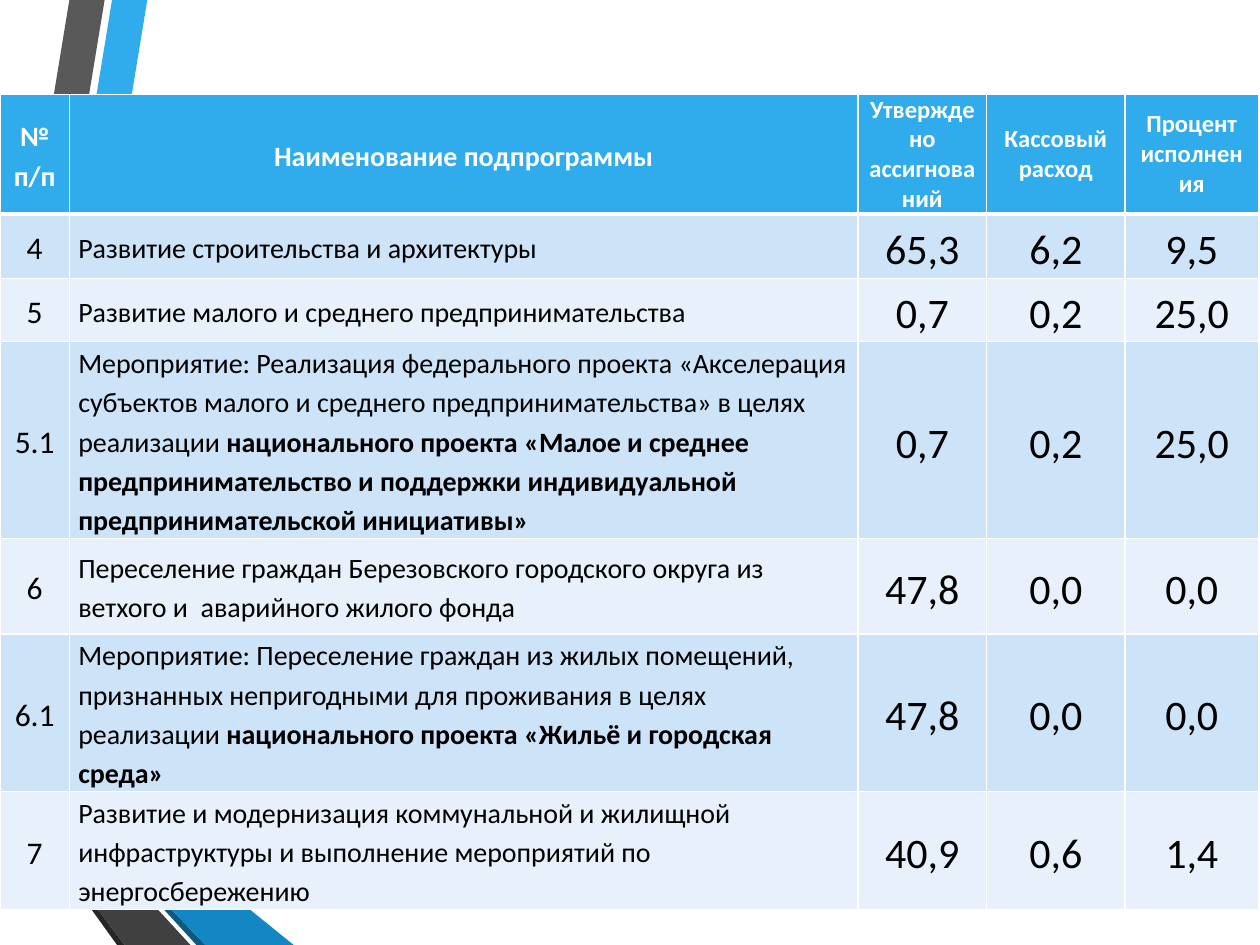
from lxml import etree
from pptx import Presentation
from pptx import util as u
from pptx.dml.color import RGBColor
from pptx.enum import text
from pptx.oxml.ns import qn

WHITE, BLACK, BLUE = "FFFFFF", "000000", "30ACEC"
BANDS = ("CDE3F8", "E8F1FB")
SLIDE_W, SLIDE_H = 25.4, 19.05

# Ribbons: fill colour and corner points in cm
RIBBONS = [
    (BLUE, [(0, 13.82), (0, 14.61), (0.56, 14.71), (2.97, 0), (2.26, 0)]),
    ("595959", [(2.11, 0), (1.4, 0), (0, 8.53), (0, 12.85)]),
    ("262626", [(0, 15.72), (0, 15.77), (2.36, SLIDE_H), (2.51, SLIDE_H)]),
    ("0C5A82", [(0, 14.71), (0, 14.73), (3.96, SLIDE_H), (4.14, SLIDE_H)]),
    ("1287C3", [(0, 14.71), (4.14, SLIDE_H), (5.92, SLIDE_H), (0.56, 14.71), (0, 14.61)]),
    ("404040", [(0, 15.72), (2.51, SLIDE_H), (3.84, SLIDE_H), (0, 14.88)]),
]

COLUMN_WIDTHS = [1.4, 15.9, 2.59, 2.79, 2.69]
ROW_HEIGHTS = [1.4, 1.3, 1.27, 2.34, 1.93, 2.34, 2.34]
HEADINGS = ["№ п/п", "Наименование подпрограммы", "Утверждено ассигнований",
            "Кассовый расход", "Процент исполнения"]

# Number, name, bold ending of the name, approved, spent, percent
PROGRAMMES = [
    ("4", "Развитие строительства и архитектуры", "", "65,3", "6,2", "9,5"),
    ("5", "Развитие малого и среднего предпринимательства", "", "0,7", "0,2", "25,0"),
    ("5.1", "Мероприятие: Реализация федерального проекта «Акселерация субъектов малого "
     "и среднего предпринимательства» в целях реализации ",
     "национального проекта «Малое и среднее предпринимательство и поддержки "
     "индивидуальной предпринимательской инициативы»", "0,7", "0,2", "25,0"),
    ("6", "Переселение граждан Березовского городского округа из ветхого и  аварийного "
     "жилого фонда", "", "47,8", "0,0", "0,0"),
    ("6.1", "Мероприятие: Переселение граждан из жилых помещений, признанных непригодными "
     "для проживания в целях реализации ",
     "национального проекта «Жильё и городская среда»", "47,8", "0,0", "0,0"),
    ("7", "Развитие и модернизация коммунальной и жилищной инфраструктуры и выполнение "
     "мероприятий по энергосбережению", "", "40,9", "0,6", "1,4"),
]


def rgb(value):
    return RGBColor.from_string(value)


def write(frame, content, ending="", size=16, color=BLACK, bold=False,
          align=text.PP_ALIGN.CENTER, spacing=1.15):
    """Write content, then an optional bold ending, as one paragraph."""
    paragraph = frame.paragraphs[0]
    paragraph.alignment = align
    paragraph.line_spacing = spacing
    for part, heavy in ((content, bold), (ending, True)):
        if part:
            run = paragraph.add_run()
            run.text = part
            run.font.name = "Calibri"
            run.font.size = u.Pt(size)
            run.font.bold = heavy
            run.font.color.rgb = rgb(color)


def set_borders(cell, top=1, bottom=1):
    properties = cell._tc.get_or_add_tcPr()
    for side, points in (("L", 1), ("R", 1), ("T", top), ("B", bottom)):
        line = etree.SubElement(properties, qn("a:ln" + side), w=str(u.Pt(points)))
        fill = etree.SubElement(line, qn("a:solidFill"))
        etree.SubElement(fill, qn("a:srgbClr"), val=WHITE)


def format_cell(cell, fill, **borders):
    set_borders(cell, **borders)
    cell.fill.solid()
    cell.fill.fore_color.rgb = rgb(fill)
    cell.vertical_anchor = text.MSO_ANCHOR.MIDDLE
    cell.margin_left = cell.margin_right = u.Cm(0.18)
    cell.margin_top = cell.margin_bottom = 0


def add_ribbons(slide, left, top):
    group = slide.shapes.add_group_shape()
    for color, corners in RIBBONS:
        points = [(u.Cm(left + x), u.Cm(top + y)) for x, y in corners]
        builder = group.shapes.build_freeform(*points[0])
        builder.add_line_segments(points[1:], close=True)
        ribbon = builder.convert_to_shape()
        ribbon.fill.solid()
        ribbon.fill.fore_color.rgb = rgb(color)
        ribbon.line.fill.background()
        ribbon.shadow.inherit = False


def add_programme_table(slide, left, top, width, height):
    frame = slide.shapes.add_table(len(ROW_HEIGHTS), len(COLUMN_WIDTHS), u.Cm(left),
                                   u.Cm(top), u.Cm(width), u.Cm(height))
    table = frame.table
    for column, column_width in zip(table.columns, COLUMN_WIDTHS):
        column.width = u.Cm(column_width)
    for row, row_height in zip(table.rows, ROW_HEIGHTS):
        row.height = u.Cm(row_height)
    frame.width, frame.height = u.Cm(width), u.Cm(height)

    # Header row
    for index, heading in enumerate(HEADINGS):
        cell = table.cell(0, index)
        format_cell(cell, BLUE, bottom=3)
        wide = index < 2
        write(cell.text_frame, heading, size=16 if wide else 14, color=WHITE,
              bold=True, spacing=1.15 if wide else 1.0)

    # Programme rows
    for index, (number, name, ending, *amounts) in enumerate(PROGRAMMES):
        cells = table.rows[index + 1].cells
        for cell in cells:
            format_cell(cell, BANDS[index % 2], top=3 if index == 0 else 1)
        write(cells[0].text_frame, number, size=18)
        write(cells[1].text_frame, name, ending, align=text.PP_ALIGN.LEFT)
        for column, amount in enumerate(amounts, start=2):
            write(cells[column].text_frame, amount, size=24)


def main():
    deck = Presentation()
    deck.slide_width, deck.slide_height = u.Cm(SLIDE_W), u.Cm(SLIDE_H)
    slide = deck.slides.add_slide(deck.slide_layouts[6])
    add_ribbons(slide, 0, 0)
    add_programme_table(slide, 0, 1.91, SLIDE_W, 16.97)
    deck.save("out.pptx")


if __name__ == "__main__":
    main()
